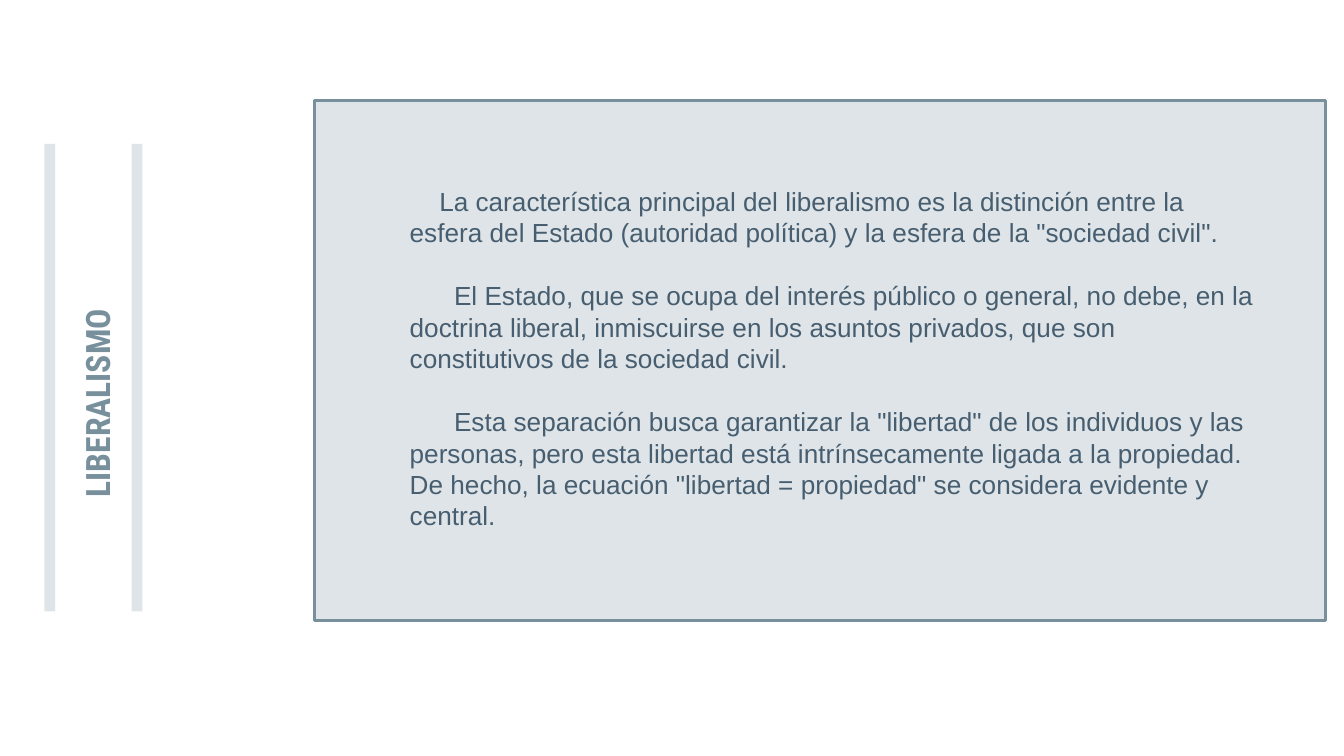
import pptx
import pptx.util
import pptx.dml.color
import pptx.enum.shapes
import pptx.enum.text
import pptx.oxml
import pptx.oxml.ns

# Content
TITLE = "LIBERALISMO"
PARAGRAPHS = [  # first-line indent in inches, text
    (0.22, 'La característica principal del liberalismo es la distinción entre la '
           'esfera del Estado (autoridad política) y la esfera de la "sociedad civil".'),
    (0.33, 'El Estado, que se ocupa del interés público o general, no debe, en la '
           'doctrina liberal, inmiscuirse en los asuntos privados, que son '
           'constitutivos de la sociedad civil.'),
    (0.33, 'Esta separación busca garantizar la "libertad" de los individuos y las '
           'personas, pero esta libertad está intrínsecamente ligada a la propiedad. '
           'De hecho, la ecuación "libertad = propiedad" se considera evidente y '
           'central.'),
]
ACCENT, INK = "78909C", "475E70"
PANEL = (2.34, 0.75, 7.52, 3.87)
BAR_LEFTS, BAR_TOP, BAR_LENGTH, BAR_THICKNESS = (-1.37, -0.72), 2.77, 3.48, 0.08

Inches, Pt = pptx.util.Inches, pptx.util.Pt

# 16:9 slide
prs = pptx.Presentation()
prs.slide_width = Inches(10)
prs.slide_height = prs.slide_width * 9 // 16
slide = prs.slides.add_slide(prs.slide_layouts[6])


def color(value):
    return pptx.dml.color.RGBColor.from_string(value)


def add_rect(box, tinted=True, rotation=0):
    s = slide.shapes.add_shape(
        pptx.enum.shapes.MSO_SHAPE.RECTANGLE, *map(Inches, box))
    s.shadow.inherit = False
    s.rotation = rotation
    if tinted:
        s.fill.solid()
        s.fill.fore_color.rgb = color(ACCENT)
        s.line.fill.background()
        rgb = s.fill._xPr.find(".//" + pptx.oxml.ns.qn("a:srgbClr"))
        alpha = pptx.oxml.parse_xml(
            f'<a:alpha {pptx.oxml.ns.nsdecls("a")} val="24000"/>')
        rgb.append(alpha)
    else:
        s.fill.background()
        s.line.color.rgb = color(ACCENT)
        s.line.width = Pt(1.5)


def add_text(box):
    s = slide.shapes.add_textbox(*map(Inches, box))
    s.text_frame.word_wrap = True
    return s, s.text_frame


def style(p, font, size, ink, bold=False):
    for r in p.runs:
        r.font.name, r.font.size, r.font.bold = font, Pt(size), bold
        r.font.color.rgb = color(ink)


# Panel: tinted fill with an outline on top
add_rect(PANEL)
add_rect(PANEL, tinted=False)

# Vertical bars beside the title
for left in BAR_LEFTS:
    add_rect((left, BAR_TOP, BAR_LENGTH, BAR_THICKNESS), rotation=270)

# Vertical title
s, tf = add_text((-2.53, 2.68, 6.36, 0.64))
s.rotation = 270
tf.vertical_anchor = pptx.enum.text.MSO_ANCHOR.BOTTOM
tf.margin_left = tf.margin_right = tf.margin_top = tf.margin_bottom = Inches(0.1)
p = tf.paragraphs[0]
p.text = TITLE
p.alignment = pptx.enum.text.PP_ALIGN.CENTER
style(p, "Roboto Condensed", 18, ACCENT, bold=True)

# Body text
s, tf = add_text((2.78, 1.33, 6.72, 2.69))
tf.auto_size = pptx.enum.text.MSO_AUTO_SIZE.SHAPE_TO_FIT_TEXT
tf.text = "\n".join(text for _, text in PARAGRAPHS)
for i, (p, (indent, _)) in enumerate(zip(tf.paragraphs, PARAGRAPHS)):
    pPr = p._p.get_or_add_pPr()
    pPr.set("marL", str(Inches(0.17)))
    pPr.set("indent", str(Inches(indent)))
    p.space_before = Pt(17 if i else 0)
    style(p, "Arial", 14, INK)

prs.save("out.pptx")
